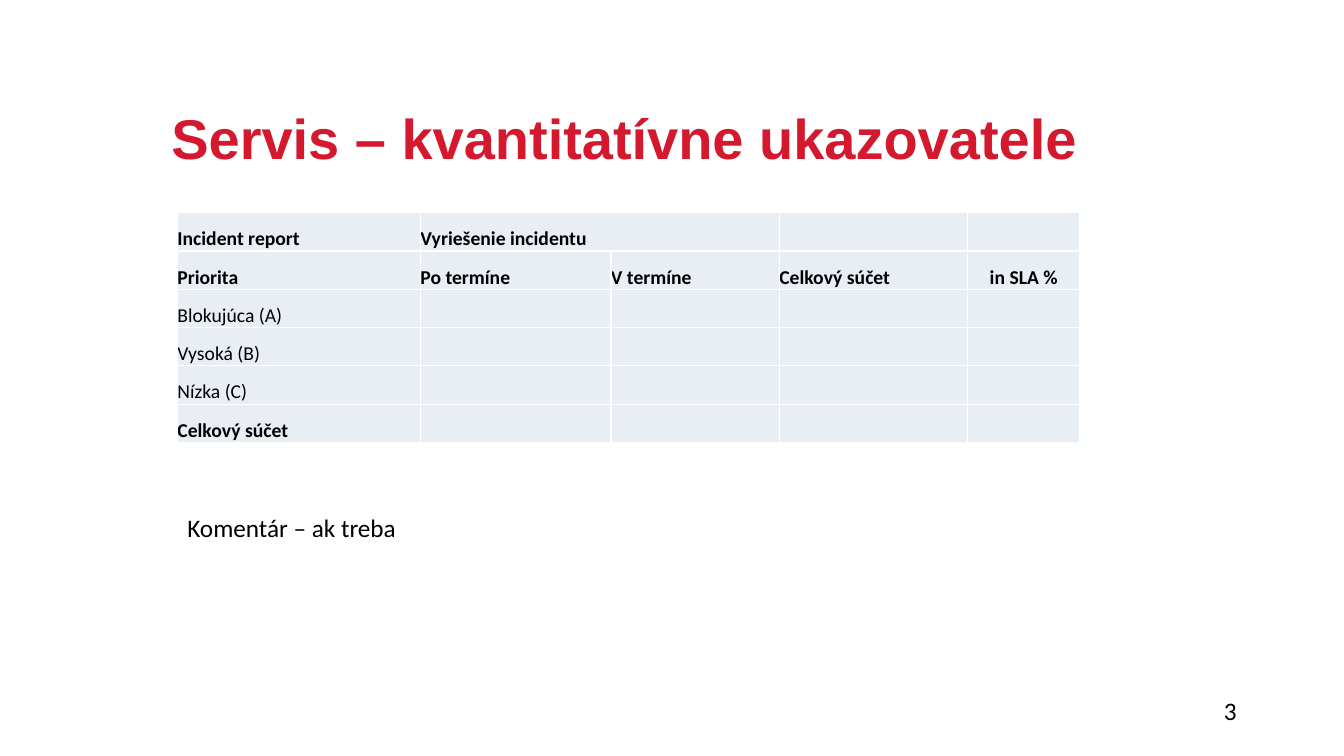
from lxml import etree
from pptx import Presentation
from pptx.dml.color import RGBColor
from pptx.enum.text import MSO_ANCHOR, MSO_AUTO_SIZE, PP_ALIGN
from pptx.oxml.ns import qn
from pptx.util import Inches, Pt

RED = RGBColor(0xD4, 0x18, 0x2E)
BLACK = RGBColor(0, 0, 0)
PALE_BLUE = RGBColor(0xE9, 0xED, 0xF4)
WHITE = RGBColor(0xFF, 0xFF, 0xFF)


def write(frame, text, size=18, font="Calibri", color=BLACK, bold=False,
          align=PP_ALIGN.LEFT):
    frame.text = text
    paragraph = frame.paragraphs[0]
    paragraph.alignment = align
    # An empty cell keeps its size on the paragraph end
    style = paragraph.runs[0].font if text else paragraph.font
    style.size, style.name, style.bold = Pt(size), font, bold
    style.color.rgb = color
    return paragraph


def add_borders(cell, color=WHITE, width=1):
    for side in ("a:lnL", "a:lnR", "a:lnT", "a:lnB"):
        line = etree.SubElement(cell._tc.get_or_add_tcPr(), qn(side), w=str(Pt(width)))
        fill = etree.SubElement(line, qn("a:solidFill"))
        etree.SubElement(fill, qn("a:srgbClr"), val=str(color))


prs = Presentation()
prs.slide_width, prs.slide_height = Inches(13.33), Inches(7.5)
slide = prs.slides.add_slide(prs.slide_layouts[5])

# Title
title = slide.shapes.title
title.left, title.top = Inches(1.6), Inches(0.5)
title.width, title.height = Inches(10), Inches(1.25)
heading = write(title.text_frame, "Servis – kvantitatívne ukazovatele",
                size=40, font="Arial", color=RED, bold=True)
heading.line_spacing = 0.9
title.text_frame.vertical_anchor = MSO_ANCHOR.BOTTOM
title.text_frame.auto_size = MSO_AUTO_SIZE.NONE

# Incident table: two header rows, three priorities, total
report = [
    ["Incident report", "Vyriešenie incidentu", "", "", ""],
    ["Priorita", "Po termíne", "V termíne", "Celkový súčet", "in SLA %"],
    ["Blokujúca (A)", "", "", "", ""],
    ["Vysoká (B)", "", "", "", ""],
    ["Nízka (C)", "", "", "", ""],
    ["Celkový súčet", "", "", "", ""],
]
column_widths = [2.41, 1.89, 1.67, 1.87, 1.11]
bold_rows = (0, 1, len(report) - 1)

incidents = slide.shapes.add_table(
    len(report), len(column_widths),
    Inches(1.76), Inches(2.11), Inches(8.95), Inches(2.28)).table
incidents.first_row = incidents.horz_banding = False
for column, width in zip(incidents.columns, column_widths):
    column.width = Inches(width)

for r, row in enumerate(report):
    incidents.rows[r].height = Inches(0.38)
    for c, text in enumerate(row):
        cell = incidents.cell(r, c)
        cell.margin_left = cell.margin_right = 0
        cell.margin_top = cell.margin_bottom = 0
        cell.vertical_anchor = MSO_ANCHOR.BOTTOM
        add_borders(cell)
        cell.fill.solid()
        cell.fill.fore_color.rgb = PALE_BLUE
        write(cell.text_frame, text, size=14, bold=r in bold_rows,
              align=PP_ALIGN.CENTER if text == "in SLA %" else PP_ALIGN.LEFT)
incidents.cell(0, 1).merge(incidents.cell(0, 2))

# Comment and page number
for text, left, top, width in [("Komentár – ak treba", 1.76, 5.03, 8.95),
                               ("3", 12.04, 6.85, 1.03)]:
    note = slide.shapes.add_textbox(
        Inches(left), Inches(top), Inches(width), Inches(0.4)).text_frame
    note.word_wrap = True
    note.auto_size = MSO_AUTO_SIZE.SHAPE_TO_FIT_TEXT
    write(note, text)

prs.save("out.pptx")
